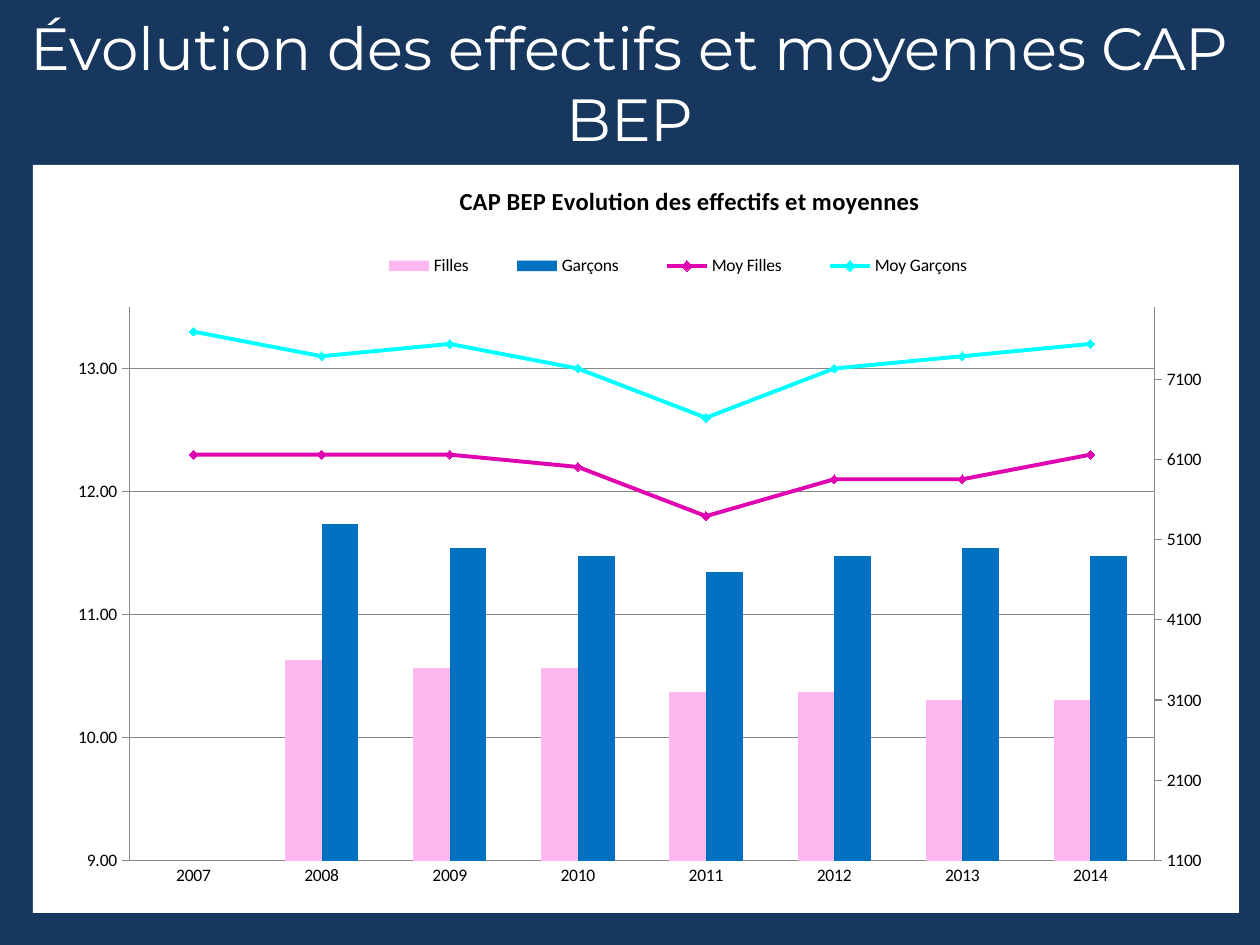
import copy
import dataclasses

import lxml.etree
import pptx
import pptx.chart.axis
import pptx.chart.chart
import pptx.chart.data
import pptx.dml.color
import pptx.enum.chart
import pptx.enum.text
import pptx.oxml
import pptx.oxml.ns
import pptx.util

SCALE = 914400 / 126
NS = pptx.oxml.ns.nsdecls("c", "a")
qn = pptx.oxml.ns.qn
GREY = "878787"


@dataclasses.dataclass
class Series:
    name: str
    color: str
    form: str
    vals: list


YEARS = [str(year) for year in range(2007, 2015)]
BARS = [
    Series("Filles", "FEB8EF", "General",
           [None, 3600, 3500, 3500, 3200, 3200, 3100, 3100]),
    Series("Garçons", "0070C0", "General",
           [None, 5300, 5000, 4900, 4700, 4900, 5000, 4900]),
]
LINES = [
    Series("Moy Filles", "DF03B0", "0.00",
           [12.3, 12.3, 12.3, 12.2, 11.8, 12.1, 12.1, 12.3]),
    Series("Moy Garçons", "00FFFF", "0.00",
           [13.3, 13.1, 13.2, 13, 12.6, 13, 13.1, 13.2]),
]


def px(*sizes: int) -> list[pptx.util.Emu]:
    return [pptx.util.Emu(round(size * SCALE)) for size in sizes]


def rgb(code: str) -> pptx.dml.color.RGBColor:
    return pptx.dml.color.RGBColor.from_string(code)


def paint(fill, code: str) -> None:
    fill.solid()
    fill.fore_color.rgb = rgb(code)


def place(parent: lxml.etree.ElementBase, index: int, target: str = "",
          **parts: float) -> None:
    """Give a chart part a manual layout, in fractions of the chart."""
    for old in parent.findall(qn("c:layout")):
        parent.remove(old)
    inner = f'<c:layoutTarget val="{target}"/>' if target else ""
    inner += "".join(f'<c:{key}Mode val="edge"/>' for key in "xy")
    inner += "".join(f'<c:{key} val="{val}"/>' for key, val in parts.items())
    parent.insert(index, pptx.oxml.parse_xml(
        f"<c:layout {NS}><c:manualLayout>{inner}</c:manualLayout></c:layout>"))


def add_title(slide, text: str) -> None:
    title = slide.shapes.title
    title.left, title.top, title.width, title.height = px(0, 0, 1260, 165)
    frame = title.text_frame
    frame.text = text
    frame.word_wrap = True
    frame.auto_size = pptx.enum.text.MSO_AUTO_SIZE.NONE
    frame.vertical_anchor = pptx.enum.text.MSO_ANCHOR.MIDDLE
    para = frame.paragraphs[0]
    para.alignment = pptx.enum.text.PP_ALIGN.CENTER
    font = para.runs[0].font
    font.name, font.size = "Montserrat", pptx.util.Pt(34)
    font.color.rgb = rgb("FFFFFF")


def scale_axis(axis, low: float, high: float, step: float, form: str) -> None:
    axis.minimum_scale, axis.maximum_scale = low, high
    axis.major_unit = step
    axis.tick_labels.number_format = form
    axis.tick_labels.number_format_is_linked = False


def style_axes(chart: pptx.chart.chart.Chart) -> None:
    marks = pptx.enum.chart.XL_TICK_MARK
    years, means = chart.category_axis, chart.value_axis
    for axis, mark in ((years, marks.NONE), (means, marks.OUTSIDE)):
        axis.major_tick_mark, axis.minor_tick_mark = mark, marks.NONE
        axis.format.line.color.rgb = rgb(GREY)
        axis.format.line.width = pptx.util.Pt(0.75)
    scale_axis(means, 9, 13.5, 1, "0.00")
    means.has_major_gridlines = True
    grid = means.major_gridlines.format.line
    grid.color.rgb, grid.width = rgb(GREY), pptx.util.Pt(0.75)


def split_lines(chart: pptx.chart.chart.Chart) -> None:
    """Move the means to a line plot and give the bars their own axes."""
    area = chart.plots[0]._element.getparent()
    bars = area.find(qn("c:barChart"))
    cat, val = area.find(qn("c:catAx")), area.find(qn("c:valAx"))
    lines = pptx.oxml.parse_xml(
        f'<c:lineChart {NS}><c:grouping val="standard"/>'
        '<c:varyColors val="0"/><c:marker val="1"/></c:lineChart>')
    mark = lines.find(qn("c:marker"))
    for ser in bars.findall(qn("c:ser"))[len(BARS):]:
        for flag in ser.findall(qn("c:invertIfNegative")):
            ser.remove(flag)
        mark.addprevious(ser)
    for link in bars.findall(qn("c:axId")):
        lines.append(copy.deepcopy(link))
    bars.addnext(lines)

    cat_two, val_two = copy.deepcopy(cat), copy.deepcopy(val)
    val.addnext(val_two)
    val_two.addnext(cat_two)
    for axis, own, other in ((cat_two, "501", "502"), (val_two, "502", "501")):
        axis.find(qn("c:axId")).set("val", own)
        axis.find(qn("c:crossAx")).set("val", other)
    for link, own in zip(bars.findall(qn("c:axId")), ("501", "502")):
        link.set("val", own)
    pptx.chart.axis.CategoryAxis(cat_two).visible = False
    counts = pptx.chart.axis.ValueAxis(val_two)
    counts.has_major_gridlines = False
    val_two.find(qn("c:axPos")).set("val", "r")
    val_two.find(qn("c:crosses")).set("val", "max")
    scale_axis(counts, 1100, 8000, 1000, "General")


def style_series(chart: pptx.chart.chart.Chart) -> None:
    bars, lines = chart.plots
    bars.gap_width, bars.overlap = 150, 0
    bars.vary_by_categories = lines.vary_by_categories = False
    for ser, item in zip(bars.series, BARS):
        paint(ser.format.fill, item.color)
    for ser, item in zip(lines.series, LINES):
        ser.smooth = False
        ser.format.line.color.rgb = rgb(item.color)
        ser.format.line.width = pptx.util.Pt(2.25)
        ser.marker.style = pptx.enum.chart.XL_MARKER_STYLE.DIAMOND
        ser.marker.size = 5
        paint(ser.marker.format.fill, item.color)
        ser.marker.format.line.color.rgb = rgb(item.color)


def add_chart(slide) -> None:
    data = pptx.chart.data.CategoryChartData()
    data.categories = YEARS
    for item in BARS + LINES:
        data.add_series(item.name, item.vals, item.form)
    chart = slide.shapes.add_chart(
        pptx.enum.chart.XL_CHART_TYPE.COLUMN_CLUSTERED,
        *px(33, 165, 1206, 748), data).chart
    chart.font.name, chart.font.size = "Calibri", pptx.util.Pt(10)
    chart.font.color.rgb = rgb("000000")
    style_axes(chart)
    split_lines(chart)
    style_series(chart)

    frame = chart.chart_title.text_frame
    frame.text = "CAP BEP Evolution des effectifs et moyennes"
    font = frame.paragraphs[0].runs[0].font
    font.name, font.size, font.bold = "Calibri", pptx.util.Pt(14), True
    font.color.rgb = rgb("000000")
    chart.has_legend = True
    chart.legend.position = pptx.enum.chart.XL_LEGEND_POSITION.TOP
    chart.legend.include_in_layout = False

    space = chart._chartSpace
    place(space.find(".//" + qn("c:title")), 1, x=0.35, y=0.02)
    place(space.find(".//" + qn("c:legend")), 1, x=0.26, y=0.11, w=0.55, h=0.05)
    place(space.find(".//" + qn("c:plotArea")), 0, "inner",
          x=0.08, y=0.19, w=0.85, h=0.74)
    space.find(qn("c:txPr")).addprevious(pptx.oxml.parse_xml(
        f'<c:spPr {NS}><a:solidFill><a:srgbClr val="FFFFFF"/></a:solidFill>'
        "<a:ln><a:noFill/></a:ln></c:spPr>"))


def main() -> None:
    deck = pptx.Presentation()
    deck.slide_width, deck.slide_height = px(1260, 945)
    slide = deck.slides.add_slide(deck.slide_layouts[5])
    paint(slide.background.fill, "17375E")
    add_title(slide, "Évolution des effectifs et moyennes CAP BEP")
    add_chart(slide)
    deck.save("out.pptx")


if __name__ == "__main__":
    main()
